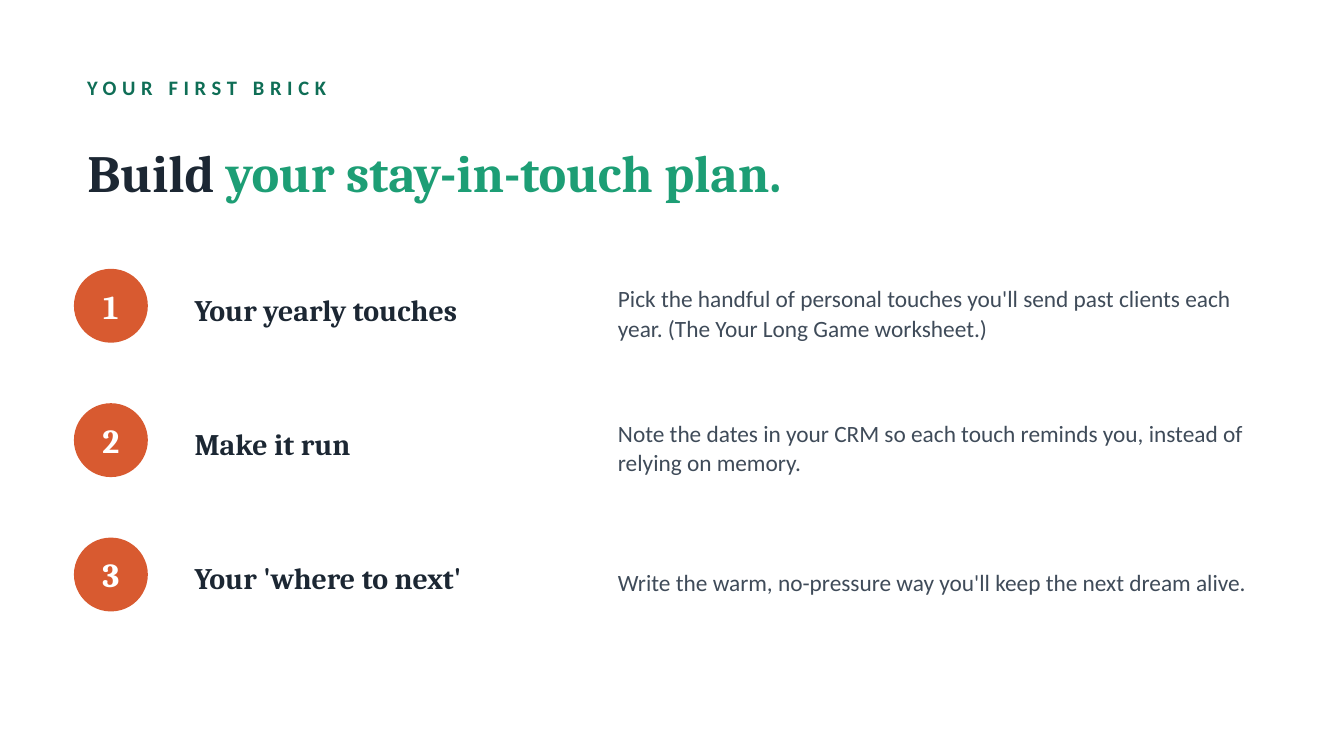
from pptx import Presentation
from pptx import util as u
from pptx.dml.color import RGBColor
from pptx.enum import shapes, text

HEADING_FONT, BODY_FONT = "Cambria", "Calibri"
INK, GREY, WHITE = "1C2733", "3F4B59", "FFFFFF"
DARK_GREEN, GREEN, ORANGE = "0F6E56", "1D9E75", "D85A30"

LEFT, FULL_WIDTH = 39.6, 640.8
FIRST_ROW_TOP, ROW_STEP = 144, 72
CIRCLE_SIZE = 39.6

STEPS = [
    ("Your yearly touches",
     "Pick the handful of personal touches you'll send past clients each year. "
     "(The Your Long Game worksheet.)"),
    ("Make it run",
     "Note the dates in your CRM so each touch reminds you, instead of relying on memory."),
    ("Your 'where to next'",
     "Write the warm, no-pressure way you'll keep the next dream alive."),
]


def color(hex_value):
    return RGBColor.from_string(hex_value)


def format_run(run, font_name, size, hex_value, bold=True):
    run.font.name = font_name
    run.font.size = u.Pt(size)
    run.font.bold = bold
    run.font.color.rgb = color(hex_value)


def center_vertically(shape):
    shape.text_frame.word_wrap = True
    shape.text_frame.vertical_anchor = text.MSO_ANCHOR.MIDDLE


def add_label(slide, box, wording, font_name, size, hex_value, bold=True):
    """Add a one-paragraph text box at box (left, top, width, height) and return the paragraph."""
    label = slide.shapes.add_textbox(*map(u.Pt, box))
    center_vertically(label)
    paragraph = label.text_frame.paragraphs[0]
    paragraph.text = wording
    format_run(paragraph.runs[0], font_name, size, hex_value, bold)
    return paragraph


def add_eyebrow(slide, wording):
    paragraph = add_label(slide, (LEFT, 36, FULL_WIDTH, 21.6), wording,
                          BODY_FONT, 11, DARK_GREEN)
    paragraph.runs[0].font._element.set("spc", "300")


def set_title(slide, parts):
    title = slide.shapes.title
    title.left, title.top = u.Pt(LEFT), u.Pt(61.2)
    title.width, title.height = u.Pt(FULL_WIDTH), u.Pt(61.2)
    center_vertically(title)
    title.text_frame.auto_size = text.MSO_AUTO_SIZE.NONE
    paragraph = title.text_frame.paragraphs[0]
    paragraph.alignment = text.PP_ALIGN.LEFT
    for wording, hex_value in parts:
        run = paragraph.add_run()
        run.text = wording
        format_run(run, HEADING_FONT, 28, hex_value)


def add_number_circle(slide, number, top):
    circle = slide.shapes.add_shape(shapes.MSO_SHAPE.OVAL, u.Pt(LEFT), u.Pt(top),
                                    u.Pt(CIRCLE_SIZE), u.Pt(CIRCLE_SIZE))
    circle.shadow.inherit = False
    circle.fill.solid()
    circle.fill.fore_color.rgb = color(ORANGE)
    circle.line.fill.background()
    center_vertically(circle)
    frame = circle.text_frame
    frame.margin_left = frame.margin_right = frame.margin_top = frame.margin_bottom = 0
    paragraph = frame.paragraphs[0]
    paragraph.text = str(number)
    paragraph.alignment = text.PP_ALIGN.CENTER
    format_run(paragraph.runs[0], HEADING_FONT, 18, WHITE)


def add_step(slide, number, heading, description):
    top = FIRST_ROW_TOP + (number - 1) * ROW_STEP
    text_top = top - 3.6
    add_number_circle(slide, number, top)
    add_label(slide, (97.2, text_top, 216, 50.4), heading, HEADING_FONT, 16, INK)
    paragraph = add_label(slide, (324, text_top, 360, 54), description,
                          BODY_FONT, 12.5, GREY, bold=False)
    paragraph.line_spacing = 1.05


def main():
    presentation = Presentation()
    presentation.slide_width, presentation.slide_height = u.Pt(720), u.Pt(405)
    slide = presentation.slides.add_slide(presentation.slide_layouts[5])
    slide.background.fill.solid()
    slide.background.fill.fore_color.rgb = color(WHITE)

    add_eyebrow(slide, "YOUR FIRST BRICK")
    set_title(slide, [("Build ", INK), ("your stay-in-touch plan.", GREEN)])
    for number, (heading, description) in enumerate(STEPS, start=1):
        add_step(slide, number, heading, description)

    presentation.save("out.pptx")


if __name__ == "__main__":
    main()
